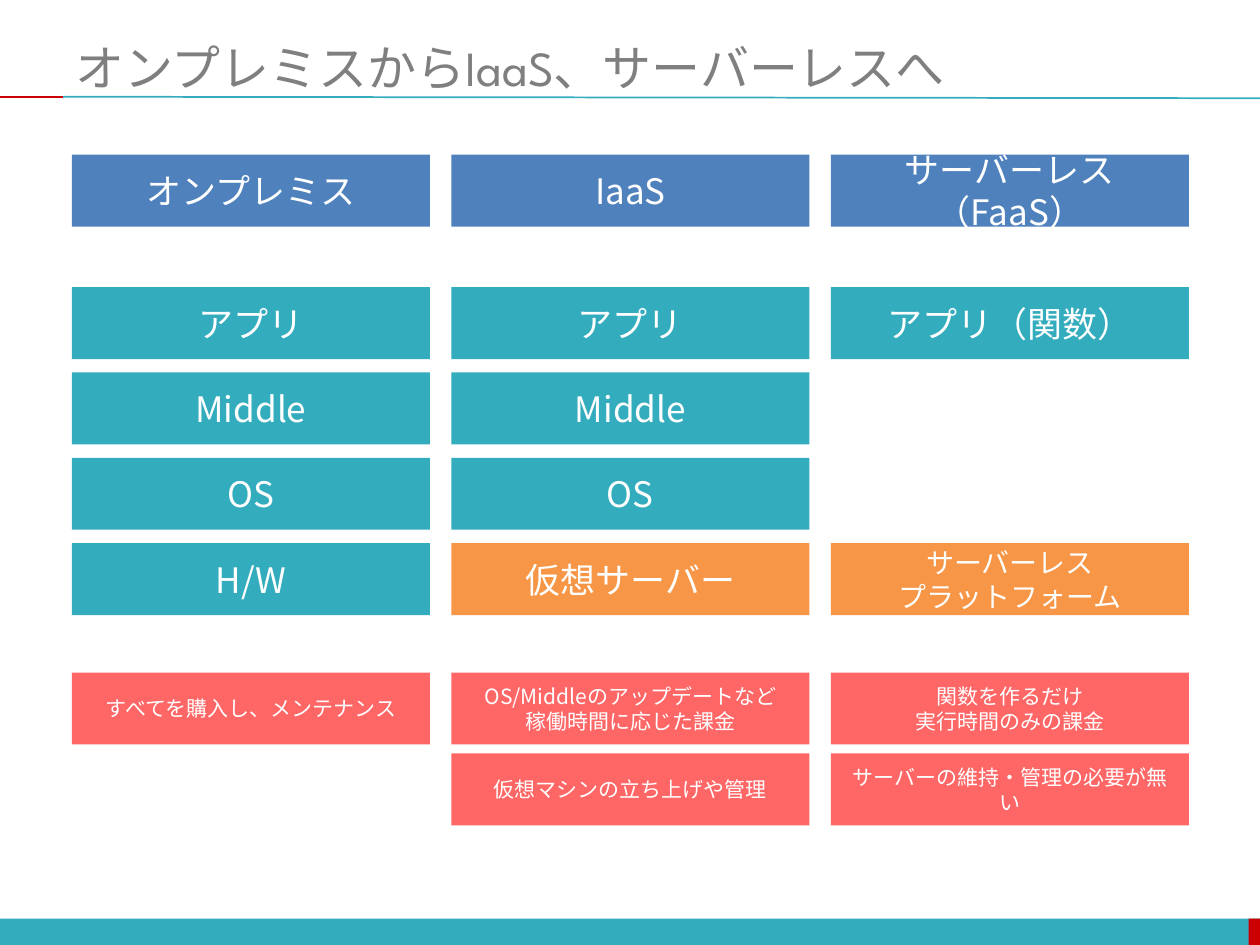
from lxml import etree
from pptx import Presentation
from pptx.dml.color import RGBColor
from pptx.enum.shapes import MSO_CONNECTOR, MSO_SHAPE
from pptx.enum.text import MSO_ANCHOR, PP_ALIGN
from pptx.oxml.ns import qn
from pptx.util import Cm, Pt

RECTANGLE = MSO_SHAPE.RECTANGLE
STRAIGHT = MSO_CONNECTOR.STRAIGHT
MIDDLE = MSO_ANCHOR.MIDDLE
CENTER = PP_ALIGN.CENTER
LEFT = PP_ALIGN.LEFT

COLORS = {
    "teal": "33ACBD",
    "red": "CC0000",
    "blue": "4F81BD",
    "orange": "F79646",
    "coral": "FF6666",
    "gray": "7F7F7F",
    "white": "FFFFFF",
}
TITLE_FONT = "League Spartan"
BODY_FONT = "Noto Sans CJK JP"

# Grid in centimetres
PAGE_WIDTH, PAGE_HEIGHT = 25.4, 19.05
COLUMN_LEFT, COLUMN_PITCH = 1.45, 7.65
BOX_WIDTH, BOX_HEIGHT = 7.22, 1.45
HEADER_TOP = 3.12
LAYER_TOP, LAYER_PITCH = 5.79, 1.72
NOTE_TOP, NOTE_PITCH = 13.56, 1.63

HEADERS = ["オンプレミス", "IaaS", "サーバーレス（FaaS）"]
LAYERS = [
    ["アプリ", "アプリ", "アプリ（関数）"],
    ["Middle", "Middle", None],
    ["OS", "OS", None],
    ["H/W", "仮想サーバー", "サーバーレス\nプラットフォーム"],
]
PROVIDED = {"仮想サーバー", "サーバーレス\nプラットフォーム"}
NOTES = [
    ["すべてを購入し、メンテナンス",
     "OS/Middleのアップデートなど\n稼働時間に応じた課金",
     "関数を作るだけ\n実行時間のみの課金"],
    [None, "仮想マシンの立ち上げや管理", "サーバーの維持・管理の必要が無い"],
]


def rgb(name):
    return RGBColor.from_string(COLORS[name])


def set_text(shape, text, size, font, color, align):
    frame = shape.text_frame
    frame.text = text
    frame.word_wrap = True
    frame.vertical_anchor = MIDDLE
    for para in frame.paragraphs:
        para.alignment = align
        for span in para.runs:
            span.font.size = Pt(size)
            span.font.name = font
            span.font.color.rgb = rgb(color)
            # Japanese glyphs use the East Asian font slot
            east_asian = etree.SubElement(span.font._element, qn("a:ea"))
            east_asian.set("typeface", BODY_FONT)


def add_block(page, left, top, width, height, color):
    block = page.shapes.add_shape(
        RECTANGLE, Cm(left), Cm(top), Cm(width), Cm(height))
    block.shadow.inherit = False
    block.fill.solid()
    block.fill.fore_color.rgb = rgb(color)
    block.line.fill.background()
    return block


def add_rule(page, start, end, top, end_top, color):
    rule = page.shapes.add_connector(
        STRAIGHT, Cm(start), Cm(top), Cm(end), Cm(end_top))
    rule.line.color.rgb = rgb(color)
    rule.line.width = Pt(1)
    etree.SubElement(rule._element.spPr, qn("a:effectLst"))


def add_row(page, labels, top, color, size):
    for column, label in enumerate(labels):
        if label is None:
            continue
        provided = label in PROVIDED
        left = COLUMN_LEFT + column * COLUMN_PITCH
        block = add_block(page, left, top, BOX_WIDTH, BOX_HEIGHT,
                          "orange" if provided else color)
        label_size = 16 if provided and "\n" in label else size
        set_text(block, label, label_size, BODY_FONT, "white", CENTER)


def add_frame(page):
    # Footer band and the rule under the title
    add_block(page, 0, 18.52, PAGE_WIDTH, 0.55, "teal")
    add_block(page, 25.17, 18.52, 0.25, 0.55, "red")
    add_rule(page, 1.27, PAGE_WIDTH, 1.95, 1.98, "teal")
    add_rule(page, 0, 1.27, 1.95, 1.95, "red")


def add_title(page, text):
    box = page.shapes.add_textbox(Cm(1.27), Cm(0.76), Cm(24.13), Cm(1.17))
    set_text(box, text, 28, TITLE_FONT, "gray", LEFT)


def main():
    deck = Presentation()
    deck.slide_width, deck.slide_height = Cm(PAGE_WIDTH), Cm(PAGE_HEIGHT)
    page = deck.slides.add_slide(deck.slide_layouts[6])

    add_frame(page)
    add_title(page, "オンプレミスからIaaS、サーバーレスへ")

    # Column headers, stack layers, then remarks
    add_row(page, HEADERS, HEADER_TOP, "blue", 20)
    for index, labels in enumerate(LAYERS):
        add_row(page, labels, LAYER_TOP + index * LAYER_PITCH, "teal", 20)
    for index, labels in enumerate(NOTES):
        add_row(page, labels, NOTE_TOP + index * NOTE_PITCH, "coral", 12)

    deck.save("out.pptx")


if __name__ == "__main__":
    main()
